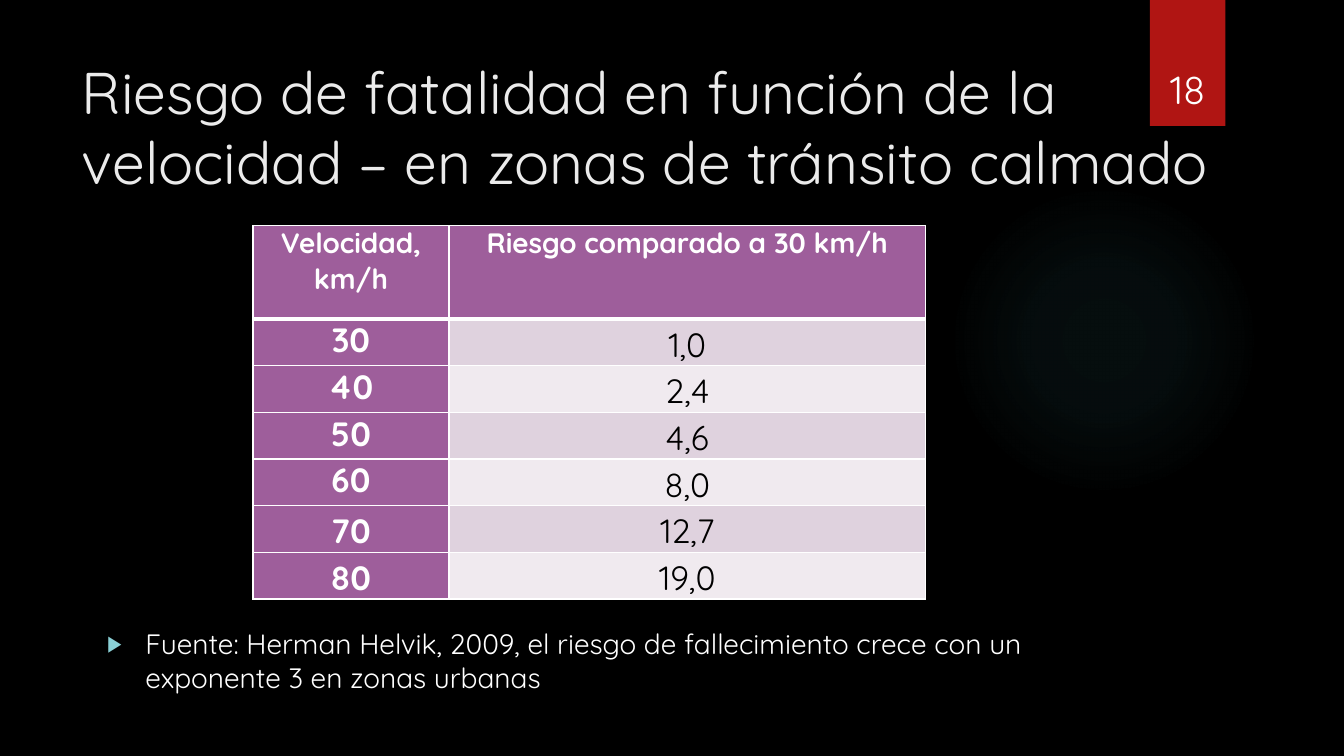
from dataclasses import dataclass

from lxml import etree
from pptx import Presentation
from pptx.dml.color import RGBColor
from pptx.enum.shapes import MSO_SHAPE
from pptx.enum.text import MSO_ANCHOR, MSO_AUTO_SIZE, PP_ALIGN
from pptx.oxml import parse_xml
from pptx.oxml.ns import nsdecls, qn
from pptx.util import Pt

RECTANGLE, OVAL = MSO_SHAPE.RECTANGLE, MSO_SHAPE.OVAL
TOP, BOTTOM = MSO_ANCHOR.TOP, MSO_ANCHOR.BOTTOM
LEFT, CENTER = PP_ALIGN.LEFT, PP_ALIGN.CENTER
NO_FIT, SHRINK = MSO_AUTO_SIZE.NONE, MSO_AUTO_SIZE.TEXT_TO_FIT_SHAPE

WIDTH, HEIGHT = 1440, 810
EMU_PER_PX = 12192000 / WIDTH


@dataclass(frozen=True)
class Theme:
    font: str = "Quicksand"
    background: str = "000000"
    title: str = "EBEBEB"
    light: str = "FFFFFF"
    dark: str = "000000"
    ribbon: str = "B01513"
    glow: str = "50B9C1"
    bullet: str = "8AD0D6"
    header: str = "9E5E9B"
    bands: tuple = ("DFD2DE", "F0EAEF")
    title_size: int = 42
    number_size: int = 28
    value_size: int = 24
    text_size: int = 20


THEME = Theme()

HEADINGS = ("Velocidad, km/h", "Riesgo comparado a 30 km/h")
RISKS = (("30", "1,0"), ("40", "2,4"), ("50", "4,6"),
         ("60", "8,0"), ("70", "12,7"), ("80", "19,0"))


def px(length):
    return int(length * EMU_PER_PX)


def place(shape, left, top, width, height):
    shape.left, shape.top = px(left), px(top)
    shape.width, shape.height = px(width), px(height)


def write(frame, text, size, color, align=LEFT, bold=False):
    frame.word_wrap = True
    para = frame.paragraphs[0]
    para.text = text
    para.alignment = align
    para.space_before = Pt(0)
    font = para.font
    font.name, font.size, font.bold = THEME.font, Pt(size), bold
    font.color.rgb = RGBColor.from_string(color)


def add_back_shape(page, kind, color, *bounds):
    """Add a plain shape behind the placeholders."""
    shape = page.shapes.add_shape(kind, *map(px, bounds))
    shape.shadow.inherit = False
    shape.fill.solid()
    shape.fill.fore_color.rgb = RGBColor.from_string(color)
    shape.line.fill.background()
    shape.element.getparent().insert(2, shape.element)
    return shape


def fade_outward(shape, color, stops):
    """Replace the solid fill by a radial fade of (position, opacity) stops."""
    marks = "".join(
        f'<a:gs pos="{position * 1000}"><a:srgbClr val="{color}">'
        f'<a:alpha val="{opacity * 1000}"/></a:srgbClr></a:gs>'
        for position, opacity in stops)
    fade = parse_xml(
        f'<a:gradFill {nsdecls("a")}><a:gsLst>{marks}</a:gsLst>'
        '<a:path path="circle"><a:fillToRect l="50000" t="50000" '
        'r="50000" b="50000"/></a:path></a:gradFill>')
    solid = shape.element.spPr.find(qn("a:solidFill"))
    solid.getparent().replace(solid, fade)


def add_bullet(para, indent):
    properties = para._p.get_or_add_pPr()
    properties.set("marL", str(px(indent)))
    properties.set("indent", str(-px(indent)))
    color = etree.SubElement(properties, qn("a:buClr"))
    etree.SubElement(color, qn("a:srgbClr"), val=THEME.bullet)
    etree.SubElement(properties, qn("a:buSzPct"), val="80000")
    etree.SubElement(properties, qn("a:buFont"), typeface="Arial")
    etree.SubElement(properties, qn("a:buChar"), char="▶")


def set_borders(cell, bottom=1, top=1):
    properties = cell._tc.get_or_add_tcPr()
    widths = {"lnL": 1, "lnR": 1, "lnT": top, "lnB": bottom}
    for index, (side, width) in enumerate(widths.items()):
        properties.insert(index, parse_xml(
            f'<a:{side} {nsdecls("a")} w="{Pt(width)}"><a:solidFill>'
            f'<a:srgbClr val="{THEME.light}"/></a:solidFill></a:{side}>'))


def fill_cell(cell, text, size, color, fill, anchor, bold):
    write(cell.text_frame, text, size, color, CENTER, bold)
    cell.vertical_anchor = anchor
    side, edge = (8, 0) if anchor == TOP else (1, 1)
    cell.margin_left = cell.margin_right = px(side)
    cell.margin_top, cell.margin_bottom = px(edge), 0
    cell.fill.solid()
    cell.fill.fore_color.rgb = RGBColor.from_string(fill)


def add_risk_table(page, left, top, columns, header_height, row_height):
    heights = [header_height] + [row_height] * len(RISKS)
    table = page.shapes.add_table(
        len(heights), len(columns), px(left), px(top),
        px(sum(columns)), px(sum(heights))).table
    table.first_row = table.horz_banding = False
    for column, width in zip(table.columns, columns):
        column.width = px(width)
    for row, height in zip(table.rows, heights):
        row.height = px(height)

    for column, heading in enumerate(HEADINGS):
        cell = table.cell(0, column)
        fill_cell(cell, heading, THEME.text_size, THEME.light,
                  THEME.header, TOP, True)
        set_borders(cell, bottom=3)

    for row, (speed, risk) in enumerate(RISKS, start=1):
        speed_cell, risk_cell = table.cell(row, 0), table.cell(row, 1)
        # The two highest speeds sit at the bottom of their cells
        fill_cell(speed_cell, speed, THEME.value_size, THEME.light,
                  THEME.header, BOTTOM if int(speed) >= 70 else TOP, True)
        fill_cell(risk_cell, risk, THEME.value_size, THEME.dark,
                  THEME.bands[(row - 1) % 2], BOTTOM, False)
        for cell in (speed_cell, risk_cell):
            set_borders(cell, top=3 if row == 1 else 1)


def main():
    deck = Presentation()
    deck.slide_width, deck.slide_height = px(WIDTH), px(HEIGHT)
    page = deck.slides.add_slide(deck.slide_layouts[1])
    page.background.fill.solid()
    page.background.fill.fore_color.rgb = RGBColor.from_string(THEME.background)

    # Backdrop: ribbon and glow
    add_back_shape(page, RECTANGLE, THEME.ribbon, 1232, 0, 81, 135)
    glow = add_back_shape(page, OVAL, THEME.glow, 1016, 198, 333, 333)
    fade_outward(glow, THEME.glow, ((0, 7), (36, 6), (69, 0)))

    # Title
    title = page.shapes.title
    place(title, 77, 54, 1327, 165)
    write(title.text_frame,
          "Riesgo de fatalidad en función de la velocidad – "
          "en zonas de tránsito calmado", THEME.title_size, THEME.title)
    title.text_frame.vertical_anchor = TOP
    title.text_frame.auto_size = SHRINK

    # Risk by speed
    add_risk_table(page, 271, 242, (210, 511), 100, 50)

    # Page number
    number = page.shapes.add_textbox(*map(px, (1223, 35, 99, 91)))
    write(number.text_frame, "18", THEME.number_size, THEME.light, CENTER)
    number.text_frame.vertical_anchor = BOTTOM

    # Source note
    note = page.placeholders[1]
    place(note, 104, 666, 1056, 294)
    add_bullet(note.text_frame.paragraphs[0], 41)
    write(note.text_frame,
          "Fuente: Herman Helvik, 2009, el riesgo de fallecimiento crece "
          "con un exponente 3 en zonas urbanas", THEME.text_size, THEME.light)
    note.text_frame.auto_size = NO_FIT

    deck.save("out.pptx")


if __name__ == "__main__":
    main()
